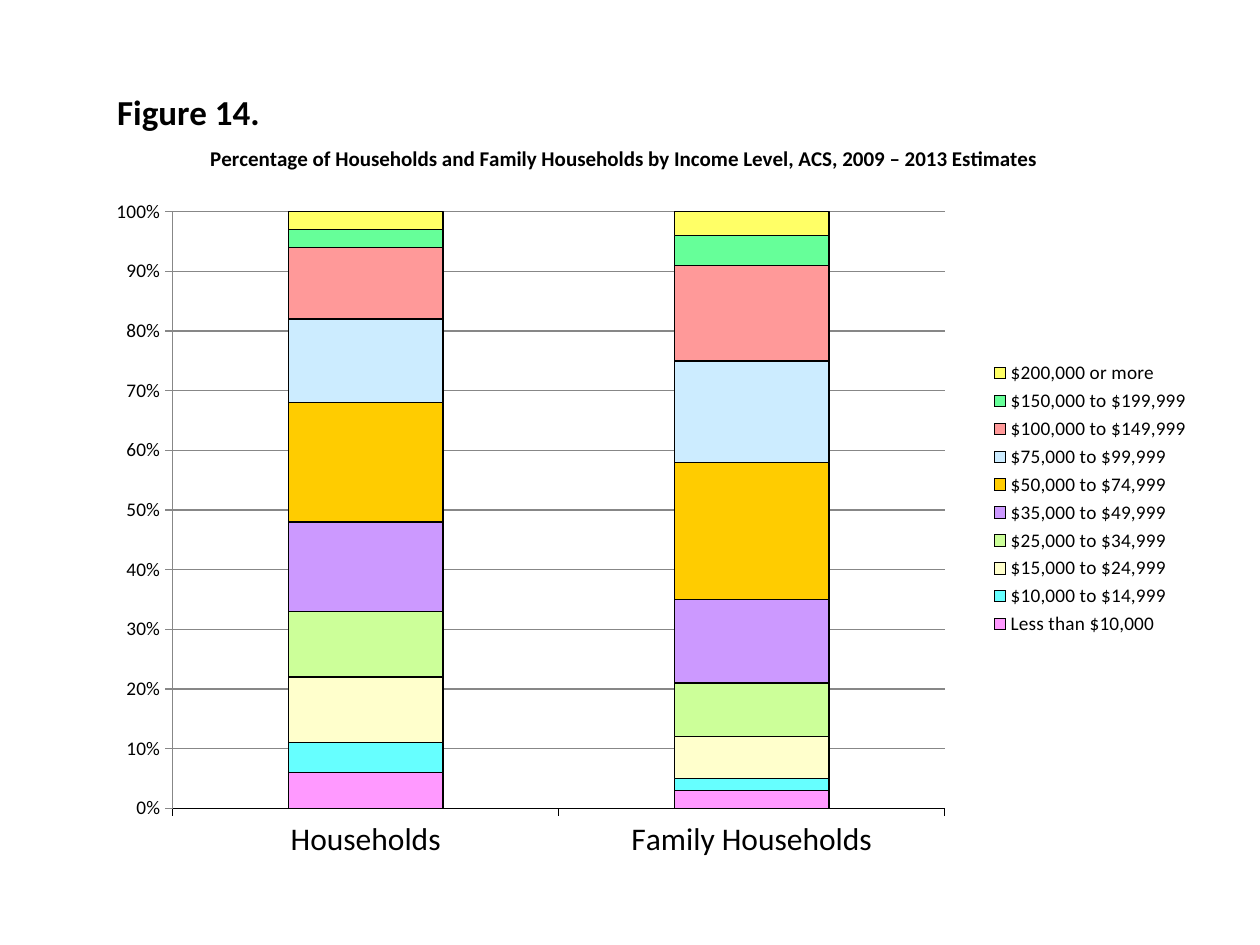
from dataclasses import dataclass

import pptx
import pptx.chart.data
import pptx.dml.color
import pptx.enum.chart
import pptx.enum.text
import pptx.oxml
import pptx.oxml.ns
import pptx.util
from pptx.util import Inches


@dataclass(frozen=True)
class Theme:
    """Hold the fonts, type sizes and colours of the slide."""
    font: str = "Calibri"
    ink: str = "000000"
    grid: str = "878787"
    heading: int = 20
    category: int = 18
    chart_title: int = 12
    label: int = 11
    line: float = 0.75


THEME = Theme()
CATEGORIES = ["Households", "Family Households"]
CHART_TITLE = ("Percentage of Households and Family Households by Income Level, "
               "ACS, 2009 – 2013 Estimates")
INCOME_LEVELS = [
    ("Less than $10,000", (6, 3), "FF99FF"),
    ("$10,000 to $14,999", (5, 2), "66FFFF"),
    ("$15,000 to $24,999", (11, 7), "FFFFCC"),
    ("$25,000 to $34,999", (11, 9), "CCFF99"),
    ("$35,000 to $49,999", (15, 14), "CC99FF"),
    ("$50,000 to $74,999", (20, 23), "FFCC00"),
    ("$75,000 to $99,999", (14, 17), "CCECFF"),
    ("$100,000 to $149,999", (12, 16), "FF9999"),
    ("$150,000 to $199,999", (3, 5), "66FF99"),
    ("$200,000 or more", (3, 4), "FFFF66"),
]


def rgb(value):
    """Turn a hex string into a colour."""
    return pptx.dml.color.RGBColor.from_string(value)


def style_font(font, size, bold=False):
    """Set the theme face and ink at a given size."""
    font.name = THEME.font
    font.size = pptx.util.Pt(size)
    font.bold = bold
    font.color.rgb = rgb(THEME.ink)


def style_line(line, color):
    """Set a thin solid line."""
    line.color.rgb = rgb(color)
    line.width = pptx.util.Pt(THEME.line)


def set_layout(parent, after, inner=False, **fractions):
    """Place a chart part by fractions of the chart's size."""
    qn = pptx.oxml.ns.qn
    for old in parent.findall(qn("c:layout")):
        parent.remove(old)
    target = '<c:layoutTarget val="inner"/>' if inner else ""
    modes = "".join(f'<c:{k}Mode val="edge"/>' for k in "xy")
    sizes = "".join(f'<c:{k} val="{v}"/>' for k, v in fractions.items())
    layout = pptx.oxml.parse_xml(
        f'<c:layout {pptx.oxml.ns.nsdecls("c")}><c:manualLayout>'
        f'{target}{modes}{sizes}</c:manualLayout></c:layout>')
    if after:
        parent.find(qn(after)).addnext(layout)
    else:
        parent.insert(0, layout)


def add_heading(s, left, top, width, height):
    """Place the figure number in the title placeholder."""
    sp = s.shapes.title
    sp.left, sp.top, sp.width, sp.height = left, top, width, height
    tf = sp.text_frame
    tf.text = "Figure 14."
    tf.word_wrap = True
    tf.auto_size = pptx.enum.text.MSO_AUTO_SIZE.SHAPE_TO_FIT_TEXT
    tf.vertical_anchor = pptx.enum.text.MSO_ANCHOR.TOP
    p = tf.paragraphs[0]
    p.alignment = pptx.enum.text.PP_ALIGN.LEFT
    p.line_spacing = 1.0
    style_font(p.runs[0].font, THEME.heading, True)


def style_axes(chart):
    """Format the category axis, the value axis and its gridlines."""
    outside = pptx.enum.chart.XL_TICK_MARK.OUTSIDE
    none = pptx.enum.chart.XL_TICK_MARK.NONE
    axes = [(chart.category_axis, THEME.category, THEME.ink),
            (chart.value_axis, THEME.label, THEME.grid)]
    for axis, size, color in axes:
        axis.major_tick_mark = outside
        axis.minor_tick_mark = none
        style_font(axis.tick_labels.font, size)
        style_line(axis.format.line, color)
    value = chart.value_axis
    value.minimum_scale, value.maximum_scale, value.major_unit = 0, 1, 0.1
    value.tick_labels.number_format = "0%"
    value.tick_labels.number_format_is_linked = False
    value.has_major_gridlines = True
    style_line(value.major_gridlines.format.line, THEME.grid)


def add_income_chart(s, left, top, width, height):
    """Place the stacked income chart in the given box."""
    data = pptx.chart.data.CategoryChartData()
    data.categories = CATEGORIES
    for name, values, _ in INCOME_LEVELS:
        data.add_series(name, values)
    kind = pptx.enum.chart.XL_CHART_TYPE.COLUMN_STACKED_100
    chart = s.shapes.add_chart(kind, left, top, width, height, data).chart
    style_font(chart.font, THEME.category)

    chart.has_title = True
    tf = chart.chart_title.text_frame
    tf.text = CHART_TITLE
    style_font(tf.paragraphs[0].runs[0].font, THEME.chart_title, True)

    plot = chart.plots[0]
    plot.gap_width, plot.overlap = 150, 100
    plot.vary_by_categories = False
    for series, (_, _, color) in zip(plot.series, INCOME_LEVELS):
        series.format.fill.solid()
        series.format.fill.fore_color.rgb = rgb(color)
        style_line(series.format.line, THEME.ink)
    style_axes(chart)

    chart.has_legend = True
    legend = chart.legend
    legend.position = pptx.enum.chart.XL_LEGEND_POSITION.RIGHT
    legend.include_in_layout = False
    style_font(legend.font, THEME.label)

    root = chart.element if hasattr(chart, "element") else chart._chartSpace
    set_layout(root.xpath("c:chart/c:title")[0], "c:tx", x=0.1, y=0.02)
    set_layout(root.xpath("c:chart/c:plotArea")[0], None, inner=True,
               x=0.07, y=0.115, w=0.69, h=0.8)
    set_layout(root.xpath("c:chart/c:legend")[0], "c:legendPos",
               x=0.79, y=0.31, w=0.2, h=0.38)


def main():
    """Build and save the slide."""
    prs = pptx.Presentation()
    prs.slide_width, prs.slide_height = Inches(10), Inches(7.5)
    s = prs.slides.add_slide(prs.slide_layouts[5])
    add_income_chart(s, Inches(0.75), Inches(1), Inches(8.88), Inches(5.92))
    add_heading(s, Inches(0.83), Inches(0.67), Inches(1.67), Inches(0.44))
    prs.save("out.pptx")


if __name__ == "__main__":
    main()
